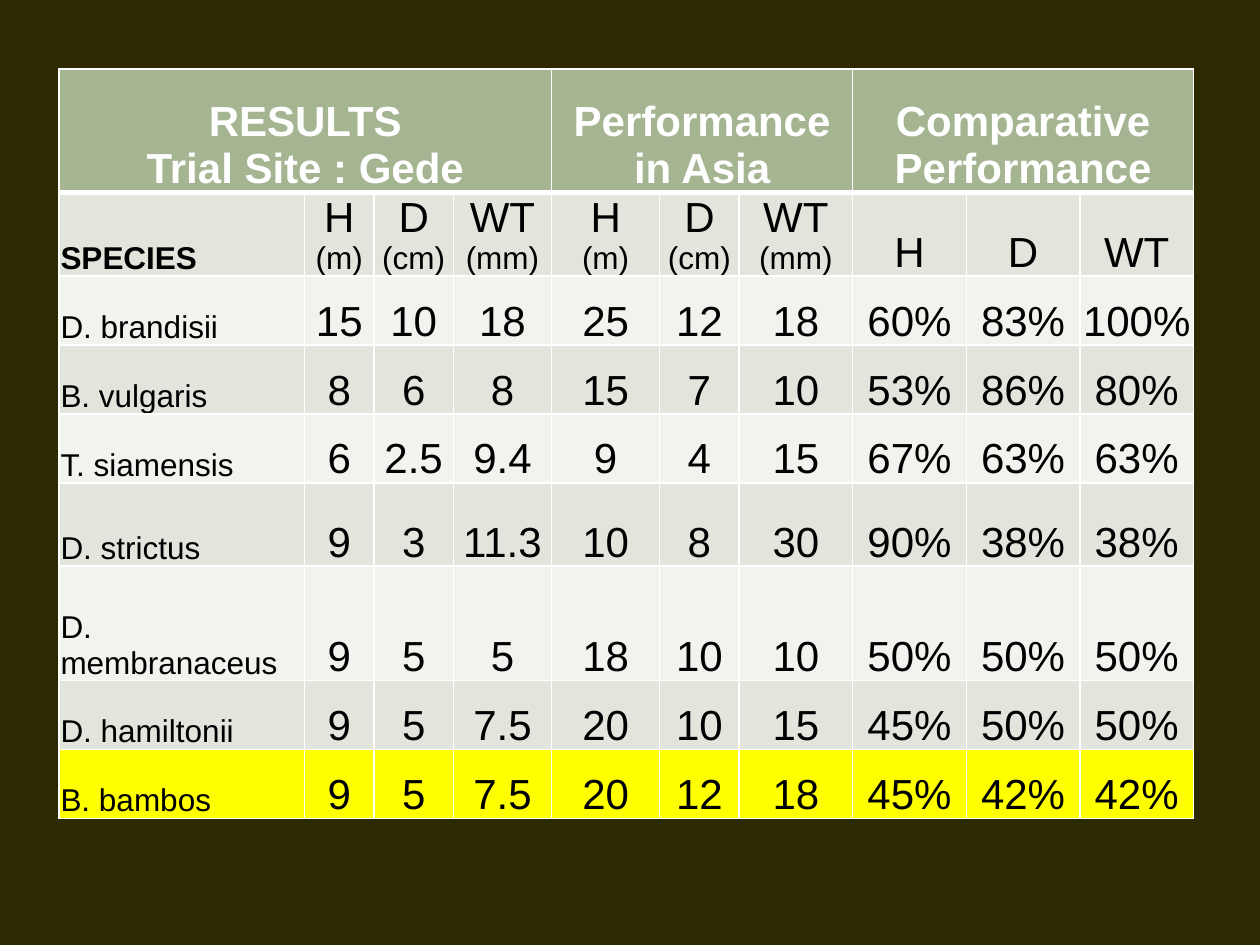
from lxml.etree import SubElement
from pptx import Presentation
from pptx.dml.color import RGBColor as Rgb
from pptx.enum.text import MSO_ANCHOR as Anchor, PP_ALIGN as Align
from pptx.oxml.ns import qn
from pptx.util import Cm, Pt

# Content: group headings with the number of columns they cover
GROUPS = [("RESULTS\nTrial Site : Gede", 4),
          ("Performance\nin Asia", 3),
          ("Comparative\nPerformance", 3)]
MEASURES = ["H\n(m)", "D\n(cm)", "WT\n(mm)"]
ROWS = [
    ["SPECIES", *MEASURES, *MEASURES, "H", "D", "WT"],
    ["D. brandisii", "15", "10", "18", "25", "12", "18", "60%", "83%", "100%"],
    ["B. vulgaris", "8", "6", "8", "15", "7", "10", "53%", "86%", "80%"],
    ["T. siamensis", "6", "2.5", "9.4", "9", "4", "15", "67%", "63%", "63%"],
    ["D. strictus", "9", "3", "11.3", "10", "8", "30", "90%", "38%", "38%"],
    ["D. membranaceus", "9", "5", "5", "18", "10", "10", "50%", "50%", "50%"],
    ["D. hamiltonii", "9", "5", "7.5", "20", "10", "15", "45%", "50%", "50%"],
    ["B. bambos", "9", "5", "7.5", "20", "12", "18", "45%", "42%", "42%"],
]
HIGHLIGHTED = "B. bambos"

# Sizes in centimetres
COLUMN_WIDTHS = [4.95, 1.4, 1.6, 1.98, 2.18, 1.6] + [2.29] * 4
ROW_HEIGHTS = [2.49, 1.39, 1.39, 1.39, 1.39, 1.68, 2.31, 1.39, 1.39]
LEFT, TOP = 1.19, 1.39

THEME = {
    "font": "Arial", "large": 24, "small": 18,
    "background": "2D2901", "heading": "A5B592",
    "bands": ["E1E5DC", "F0F3EE"], "highlight": "FFFF00",
    "light": "FFFFFF", "dark": "000000",
    "rule": 1, "heading_rule": 3,
}


def add_borders(cell, top, bottom):
    """Rule all four sides; call before filling, as borders precede the fill."""
    props = cell._tc.get_or_add_tcPr()
    widths = {"a:lnL": THEME["rule"], "a:lnR": THEME["rule"],
              "a:lnT": top, "a:lnB": bottom}
    for side, width in widths.items():
        line = SubElement(props, qn(side), w=str(Pt(width)))
        fill = SubElement(line, qn("a:solidFill"))
        SubElement(fill, qn("a:srgbClr"), val=THEME["light"])


def style_cell(cell, row, fill):
    heavy, thin = THEME["heading_rule"], THEME["rule"]
    add_borders(cell, heavy if row == 1 else thin, heavy if row == 0 else thin)
    cell.fill.solid()
    cell.fill.fore_color.rgb = Rgb.from_string(fill)
    cell.vertical_anchor = Anchor.BOTTOM
    cell.margin_left = cell.margin_right = cell.margin_top = Cm(0.03)
    cell.margin_bottom = 0


def write(cell, text, color, align=Align.CENTER, size=THEME["large"], bold=False):
    cell.text_frame.text = text
    for paragraph in cell.text_frame.paragraphs:
        paragraph.alignment = align
        is_unit = paragraph.text.startswith("(")
        for run in paragraph.runs:
            run.font.name = THEME["font"]
            run.font.size = Pt(THEME["small"] if is_unit else size)
            run.font.bold = bold
            run.font.color.rgb = Rgb.from_string(color)


def main():
    deck = Presentation()
    deck.slide_width, deck.slide_height = Cm(25.4), Cm(19.05)
    slide = deck.slides.add_slide(deck.slide_layouts[6])
    slide.background.fill.solid()
    slide.background.fill.fore_color.rgb = Rgb.from_string(THEME["background"])

    # Table grid
    results = slide.shapes.add_table(
        len(ROW_HEIGHTS), len(COLUMN_WIDTHS), Cm(LEFT), Cm(TOP),
        Cm(sum(COLUMN_WIDTHS)), Cm(sum(ROW_HEIGHTS))).table
    for column, width in zip(results.columns, COLUMN_WIDTHS):
        column.width = Cm(width)
    for row, height in zip(results.rows, ROW_HEIGHTS):
        row.height = Cm(height)

    # Group headings
    for col in range(len(COLUMN_WIDTHS)):
        style_cell(results.cell(0, col), 0, THEME["heading"])
    start = 0
    for heading, span in GROUPS:
        cell = results.cell(0, start)
        cell.merge(results.cell(0, start + span - 1))
        write(cell, heading, THEME["light"], bold=True)
        start += span

    # Measures and species
    for r, values in enumerate(ROWS, start=1):
        band = THEME["bands"][(r - 1) % 2]
        fill = THEME["highlight"] if values[0] == HIGHLIGHTED else band
        for c, value in enumerate(values):
            cell = results.cell(r, c)
            style_cell(cell, r, fill)
            if c == 0:
                write(cell, value, THEME["dark"], Align.LEFT, THEME["small"], r == 1)
            else:
                write(cell, value, THEME["dark"])

    deck.save("out.pptx")


if __name__ == "__main__":
    main()
